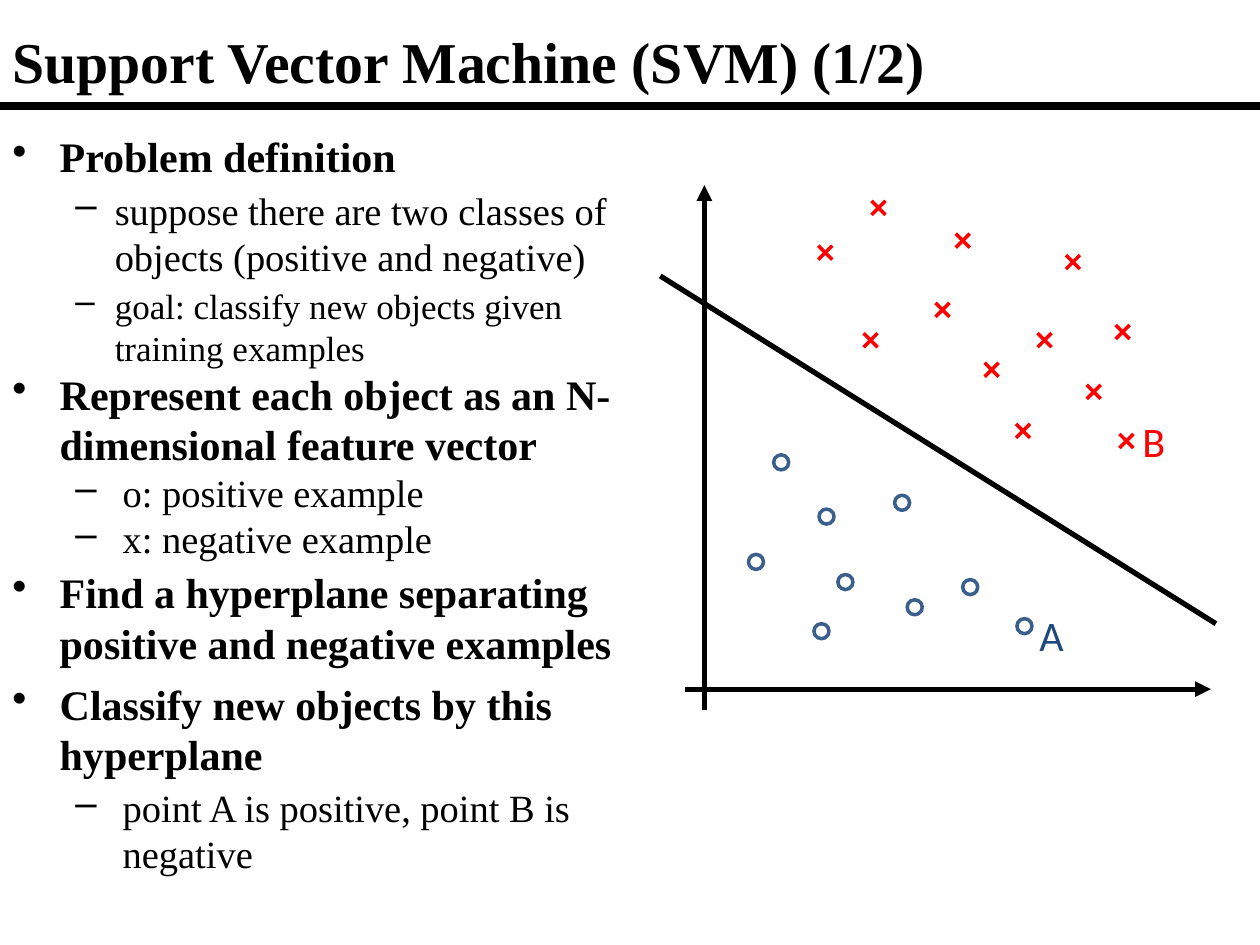
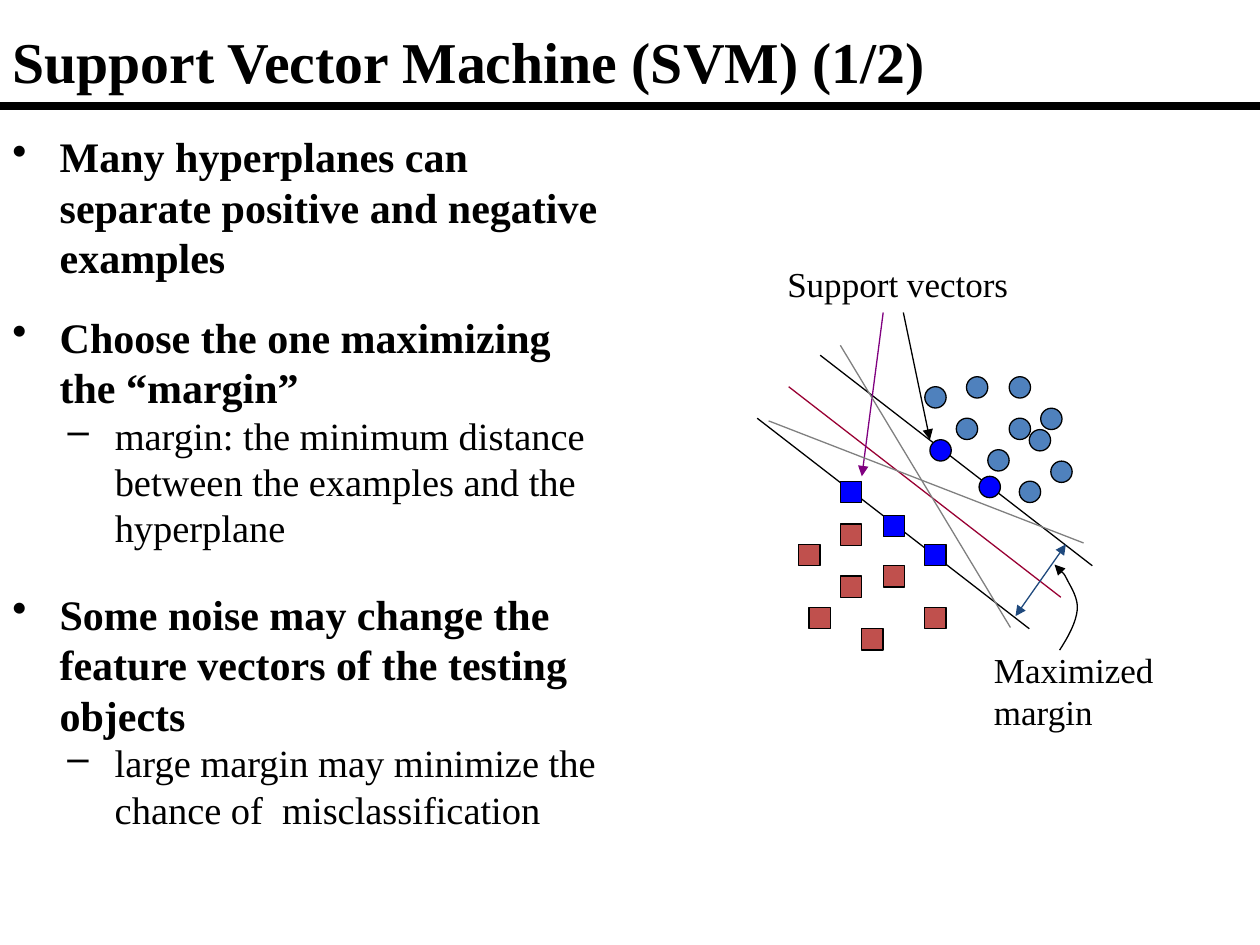
from dataclasses import dataclass

from lxml import etree
from pptx import Presentation
from pptx.dml.color import RGBColor
from pptx.enum import shapes, text
from pptx.oxml import ns
from pptx.util import Pt


@dataclass(frozen=True)
class Theme:
    serif: str = "Times New Roman"
    sans: str = "Calibri"
    black: str = "000000"
    grey: str = "808080"
    red: str = "FF0000"
    navy: str = "1F497D"
    ring: str = "3A5F8C"
    circle: str = "4F81BD"
    square: str = "C0504D"
    support: str = "0000FF"
    best_plane: str = "990033"
    purple: str = "800080"
    title_size: int = 33
    heading_size: int = 24
    detail_size: int = 22
    small_size: int = 20
    axis_width: float = 3
    mark_width: float = 2
    thin_width: float = 0.75


THEME = Theme()
TITLE = "Support Vector Machine (SVM) (1/2)"
ELLIPSE = shapes.MSO_SHAPE.OVAL
RECTANGLE = shapes.MSO_SHAPE.RECTANGLE

# Centres of the training examples, in points
POSITIVE_EXAMPLES = [(446.4, 264.2), (472.3, 295.2), (515.5, 287.3), (554.4, 335.5),
                     (522.7, 347), (483.1, 332.6), (432, 321.1), (469.4, 360.7)]
NEGATIVE_EXAMPLES = [(502, 118.8), (497.5, 194.4), (584.6, 246.2), (596.9, 194.4),
                     (538.6, 177.1), (550.2, 137.5), (613.1, 149.8), (625, 223.9),
                     (566.6, 211.3), (471.6, 144.4), (641.5, 189.7)]
POINT_A = (585.4, 357.8)
POINT_B = (643.7, 252)

CIRCLES = [(558.4, 221.4), (582.8, 245.1), (570.6, 263.1), (606.6, 269.6),
           (588.6, 281.1), (582.8, 221.4), (534.6, 227.1), (594.3, 251.6),
           (600.8, 239.4), (552.6, 245.1)]
SQUARES = [(486.4, 305.6), (498.6, 365.4), (510.8, 329.4), (534.6, 353.2),
           (462.6, 317.2), (486.4, 335.2), (468.4, 353.2)]
SUPPORT_CIRCLES = [(537.5, 257.4), (565.6, 278.3)]
SUPPORT_SQUARES = [(510.8, 300.6), (534.6, 317.2), (486.4, 281.2)]
# Start point, then two control points and an end point for each curve
MARGIN_POINTER = [(605.5, 371.5),
                  (610.6, 363.6), (614.9, 355.7), (615.6, 348.5),
                  (616.3, 342), (612, 335.5), (609.8, 331.2),
                  (607.7, 326.9), (603.4, 324), (602.6, 322.6)]


def color(value):
    return RGBColor.from_string(value)


def add_child(parent, tag, **attributes):
    return etree.SubElement(parent, ns.qn(tag), attributes)


def style_line(shape, line_color, width, head=False, tail=False):
    shape.line.color.rgb = color(line_color)
    shape.line.width = Pt(width)
    for wanted, tag in ((head, "a:headEnd"), (tail, "a:tailEnd")):
        if wanted:
            add_child(shape.get_or_add_ln(), tag, type="triangle")


def write(paragraph, content, *, size, font=THEME.serif, bold=False, ink=THEME.black,
          level=0, bullet=None, margin=0, hanging=0, before=0, after=0):
    """Fill one paragraph; margin and hanging place its bullet, if any."""
    run = paragraph.add_run()
    run.text = content
    run.font.size = Pt(size)
    run.font.name = font
    run.font.bold = bold
    run.font.color.rgb = color(ink)
    paragraph.level = level
    paragraph.space_before = Pt(before)
    paragraph.space_after = Pt(after)
    if bullet:
        properties = paragraph._p.get_or_add_pPr()
        properties.set("marL", str(Pt(margin)))
        properties.set("indent", str(-Pt(hanging)))
        add_child(properties, "a:buChar", char=bullet)


def heading(content, **spacing):
    return content, dict(size=THEME.heading_size, bold=True, bullet="•",
                         margin=27, hanging=27, **spacing)


def detail(content, size=THEME.detail_size, margin=58.5, hanging=27, **spacing):
    return content, dict(size=size, level=1, bullet="–", margin=margin,
                         hanging=hanging, **spacing)


def add_text(slide, box, paragraphs, wrap=True, grow=True,
             anchor=text.MSO_ANCHOR.TOP):
    """Add a text box from (content, format) pairs, one for each paragraph."""
    frame = slide.shapes.add_textbox(*map(Pt, box)).text_frame
    frame.word_wrap = wrap
    frame.vertical_anchor = anchor
    frame.auto_size = (text.MSO_AUTO_SIZE.SHAPE_TO_FIT_TEXT if grow
                       else text.MSO_AUTO_SIZE.NONE)
    for index, (content, style) in enumerate(paragraphs):
        paragraph = frame.add_paragraph() if index else frame.paragraphs[0]
        write(paragraph, content, **style)


def add_line(slide, start, end, line_color=THEME.black, width=THEME.thin_width,
             **arrows):
    line = slide.shapes.add_connector(shapes.MSO_CONNECTOR.STRAIGHT,
                                      *map(Pt, (*start, *end)))
    style_line(line, line_color, width, **arrows)
    add_child(line._element.spPr, "a:effectLst")


def add_markers(slide, kind, centres, size, fill=None, line_color=THEME.black,
                width=THEME.thin_width):
    for x, y in centres:
        marker = slide.shapes.add_shape(
            kind, *map(Pt, (x - size / 2, y - size / 2, size, size)))
        marker.shadow.inherit = False
        if fill:
            marker.fill.solid()
            marker.fill.fore_color.rgb = color(fill)
        else:
            marker.fill.background()
        style_line(marker, line_color, width)


def add_crosses(slide, centres, half=4):
    for x, y in centres:
        for rise in (half, -half):
            add_line(slide, (x - half, y - rise), (x + half, y + rise),
                     THEME.red, THEME.mark_width)


def add_curved_arrow(slide, points):
    """Build an outline, then turn each three segments into one Bézier curve."""
    start, *others = [(Pt(x), Pt(y)) for x, y in points]
    builder = slide.shapes.build_freeform(*start)
    builder.add_line_segments(others, close=False)
    curve = builder.convert_to_shape()
    segments = list(curve._element.iter(ns.qn("a:lnTo")))
    outline = segments[0].getparent()
    for first in range(0, len(segments), 3):
        bezier = add_child(outline, "a:cubicBezTo")
        for segment in segments[first:first + 3]:
            bezier.append(segment[0])
            outline.remove(segment)
    curve.shadow.inherit = False
    curve.fill.background()
    style_line(curve, THEME.black, THEME.thin_width, tail=True)


def add_titled_slide(presentation):
    slide = presentation.slides.add_slide(presentation.slide_layouts[6])
    add_text(slide, (0, 6, 719, 57),
             [(TITLE, dict(size=THEME.title_size, bold=True))],
             grow=False, anchor=text.MSO_ANCHOR.MIDDLE)
    add_line(slide, (0, 60.4), (720, 60.4), width=4.5)
    return slide


def add_classification_plot(slide):
    for start, end, arrow in (((377.3, 157.7), (694.8, 356.4), False),
                              ((402.5, 406), (402.5, 105.8), True),
                              ((391.7, 393.8), (691.9, 393.8), True)):
        add_line(slide, start, end, width=THEME.axis_width, tail=arrow)
    add_markers(slide, ELLIPSE, POSITIVE_EXAMPLES + [POINT_A], 8.6,
                line_color=THEME.ring, width=THEME.mark_width)
    add_crosses(slide, NEGATIVE_EXAMPLES + [POINT_B])
    for name, left, top, ink in (("A", 586.8, 344.9, THEME.navy),
                                 ("B", 645.8, 234, THEME.red)):
        add_text(slide, (left, top, 33.8, 36),
                 [(name, dict(size=24, font=THEME.sans, ink=ink))])


def add_margin_plot(slide):
    add_markers(slide, ELLIPSE, CIRCLES, 12.2, THEME.circle)
    add_markers(slide, RECTANGLE, SQUARES, 12.2, THEME.square)
    for shift, ink in ((0, THEME.best_plane), (18, THEME.black), (-18, THEME.black)):
        add_line(slide, (450.7 + shift, 221 - shift), (606.2 + shift, 341.3 - shift), ink)

    label = dict(size=THEME.small_size)
    add_text(slide, (442.8, 146.2, 141.8, 31.7), [("Support vectors", label)],
             wrap=False)
    add_line(slide, (504.7, 178.6), (492.5, 272.2), THEME.purple, tail=True)
    add_line(slide, (516.2, 178.6), (531.4, 251.3), tail=True)

    add_line(slide, (580.3, 352.1), (609.1, 311), THEME.navy, head=True, tail=True)
    add_text(slide, (560.9, 367.2, 106.6, 55.4),
             [("Maximized", label), ("margin", label)], wrap=False)
    add_curved_arrow(slide, MARGIN_POINTER)

    add_line(slide, (480.2, 197.3), (577.4, 358.6), THEME.grey)
    add_line(slide, (439.2, 240.5), (619.2, 310.3), THEME.grey)
    add_markers(slide, ELLIPSE, SUPPORT_CIRCLES, 12.2, THEME.support)
    add_markers(slide, RECTANGLE, SUPPORT_SQUARES, 12.2, THEME.support)


def build_problem_slide(presentation):
    slide = add_titled_slide(presentation)
    add_classification_plot(slide)
    add_text(slide, (0, 71.3, 365.8, 437.8), [
        heading("Problem definition"),
        detail("suppose there are two classes of objects (positive and negative)",
               hanging=22.5, before=3),
        detail("goal: classify new objects given training examples",
               size=THEME.small_size, hanging=22.5, before=3),
        heading("Represent each object as an N-dimensional feature vector"),
        detail("o: positive example", margin=63),
        detail("x: negative example", margin=63),
        heading("Find a hyperplane separating positive and negative examples",
                before=3, after=3),
        heading("Classify new objects by this hyperplane", before=3),
        detail("point A is positive, point B is negative", margin=63, before=3),
    ])


def build_margin_slide(presentation):
    slide = add_titled_slide(presentation)
    add_margin_plot(slide)
    add_text(slide, (0, 71.3, 354.2, 94.3), [
        heading("Many hyperplanes can separate positive and negative examples"),
    ])
    add_text(slide, (0, 174.2, 354.2, 145.4), [
        heading("Choose the one maximizing the “margin”"),
        detail("margin: the minimum distance between the examples and the hyperplane"),
    ])
    add_text(slide, (0, 332.6, 350.6, 147.6), [
        heading("Some noise may change the feature vectors of the testing objects"),
        detail("large margin may minimize the chance of  misclassification"),
    ])


def main():
    presentation = Presentation()
    presentation.slide_width = Pt(720)
    presentation.slide_height = Pt(540)
    build_problem_slide(presentation)
    build_margin_slide(presentation)
    presentation.save("out.pptx")


if __name__ == "__main__":
    main()
